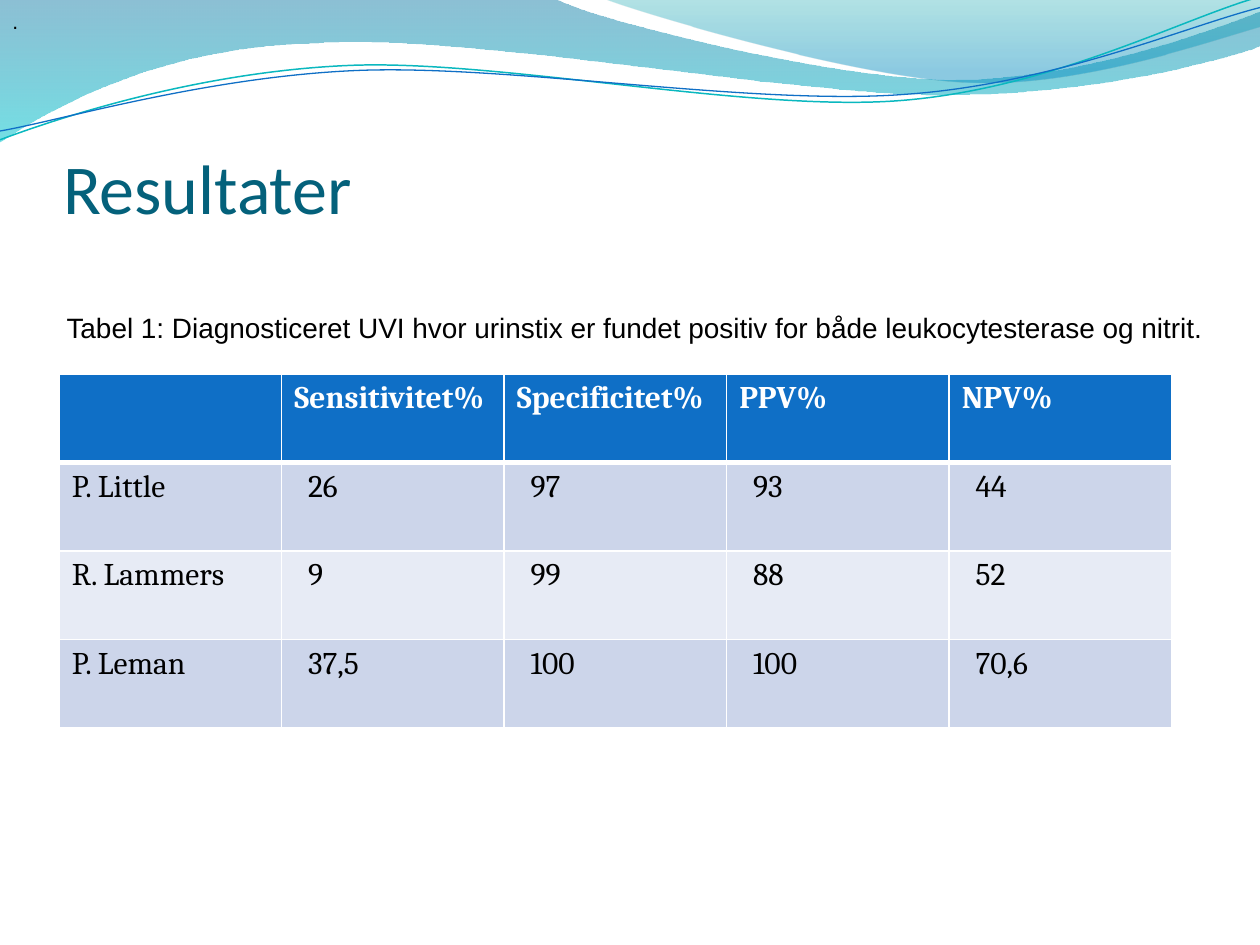
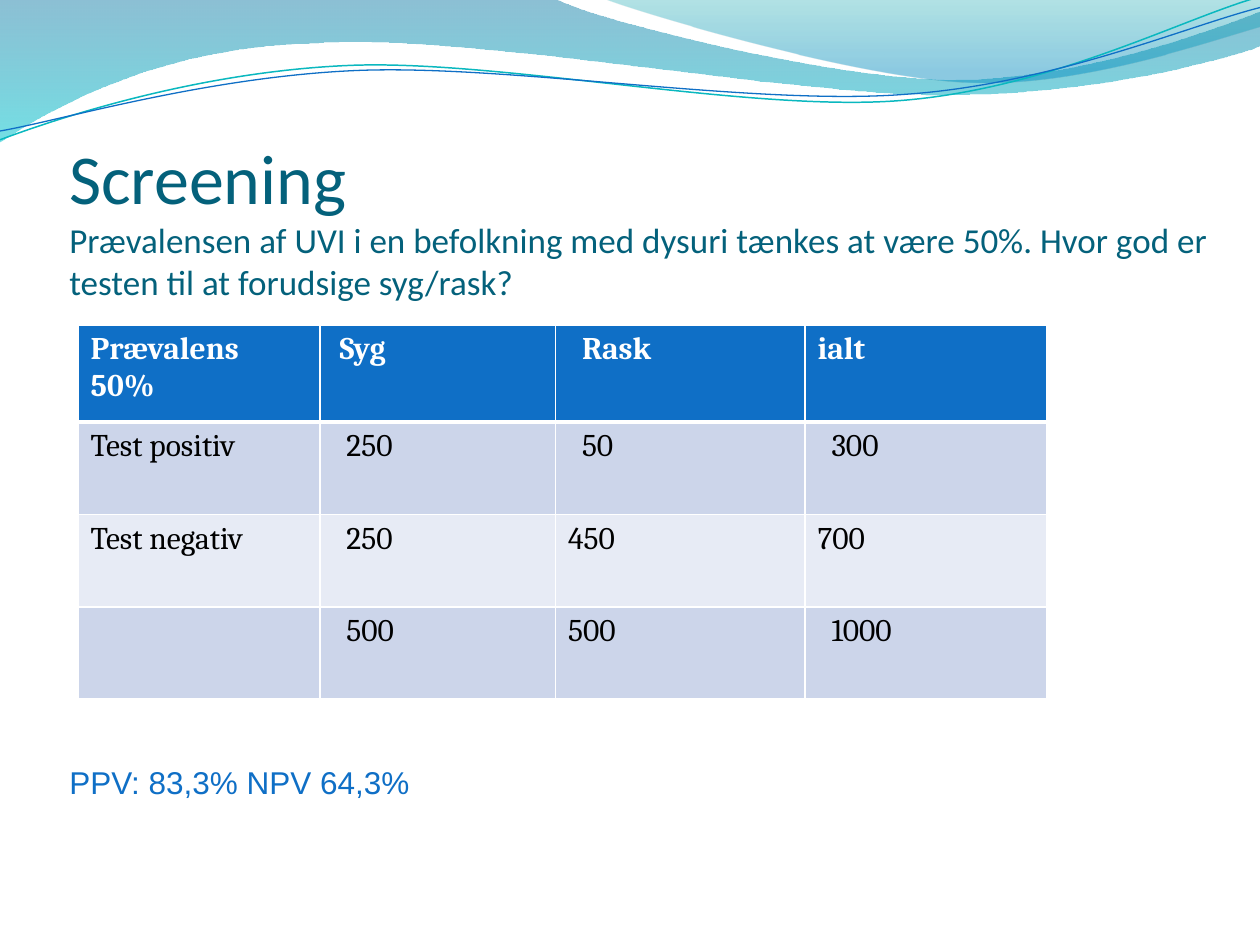
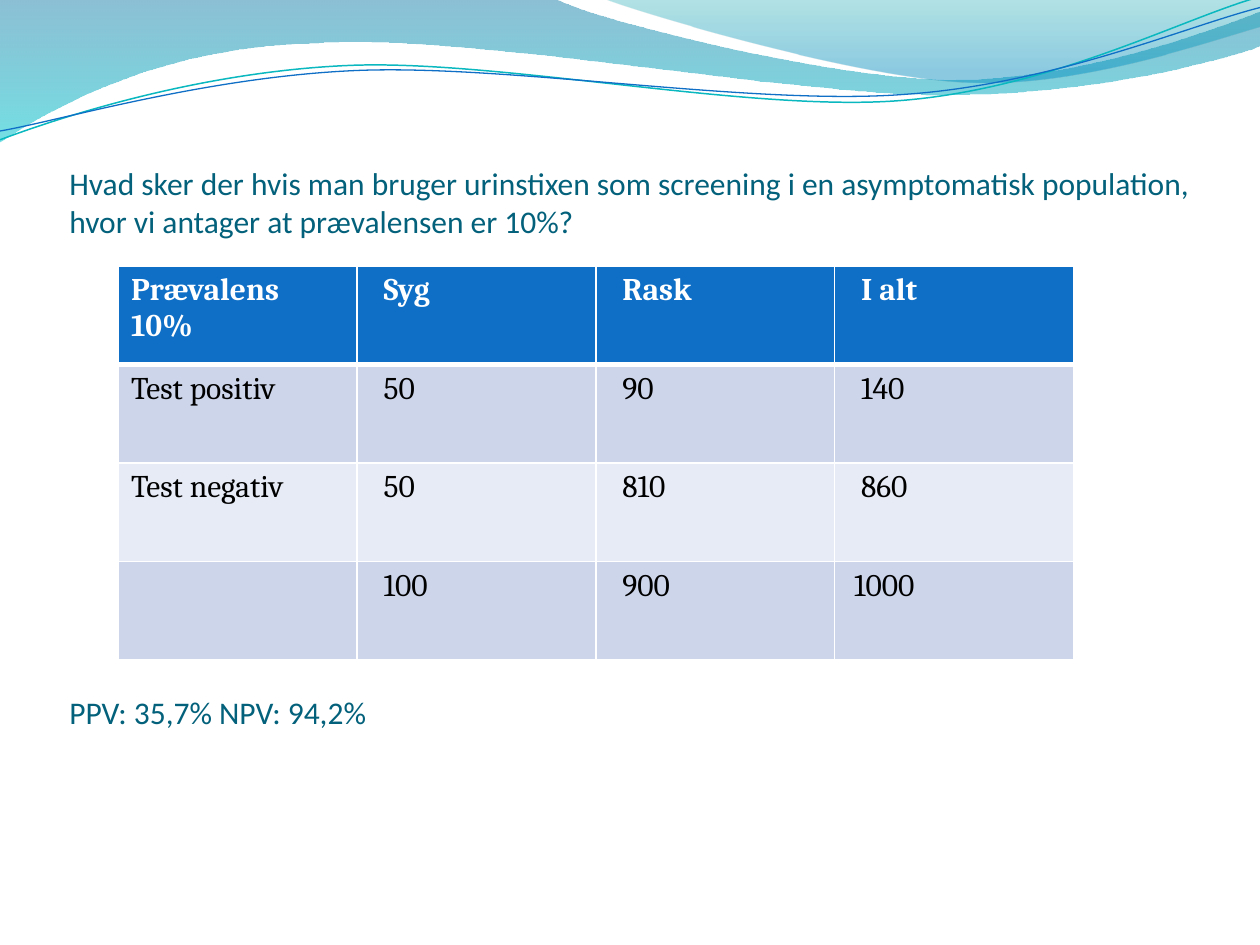
"""Builds three slides on urine dipstick results and screening."""
from lxml.etree import SubElement
from pptx import Presentation
from pptx.dml.color import RGBColor
from pptx.oxml.ns import qn
from pptx.util import Inches, Pt

TEAL, BLUE, WHITE, BLACK = "04617B", "0F6FC6", "FFFFFF", "000000"
BANDS = ("CCD5EA", "E7EBF5")
SPACE_WIDTH = 0.055

FILLED_WAVES = [
    {"start": (0, 0),
     "parts": [(4.4, -0.01),
               (4.76, 0.17, 6.64, 0.63, 7.58, 0.63),
               (8.53, 0.63, 9.58, 0.26, 10, 0.09),
               (10.01, 0.36),
               (9.83, 0.44, 8.7, 0.76, 7.46, 0.75),
               (6.22, 0.75, 3.82, 0.28, 2.57, 0.34),
               (1.29, 0.36, 0.46, 0.83, -0.01, 1.13),
               (0, 0)],
     "stops": [(0, "0074A1", 45), (1, "00C6CF", 55)]},
    {"start": (4.79, -0.01),
     "parts": [(5.09, 0.11, 6.82, 0.62, 7.69, 0.65),
               (8.56, 0.69, 9.61, 0.32, 10, 0.21),
               (10, 0),
               (4.79, -0.01)],
     "stops": [(0, "00A1A9", 30), (0.8, "008BBF", 45)]},
]
LINE_WAVES = [
    {"start": (0, 1.11),
     "parts": [(0.48, 0.93, 1.58, 0.57, 2.77, 0.52),
               (3.95, 0.47, 5.93, 0.89, 7.13, 0.8),
               (8.33, 0.71, 9.38, 0.15, 9.98, -0.02)],
     "color": "0AB8BF", "width": 0.85},
    {"start": (0, 1.04),
     "parts": [(0.47, 0.96, 1.64, 0.61, 2.83, 0.56),
               (4.03, 0.51, 5.97, 0.84, 7.17, 0.75),
               (8.36, 0.67, 9.41, 0.21, 10, 0.06)],
     "color": BLUE, "width": 0.75},
]

SLIDES = [
    {"title_box": (0.5, 1.1, 9.08, 5.47),
     "title": [("Resultater", 40, "Calibri", TEAL, 0)],
     "table_at": (0.47, 2.97),
     "cols": [8.83 / 5] * 5,
     "rows": [2.81 / 4] * 4,
     "cells": [["", "Sensitivitet%", "Specificitet%", "PPV%", "NPV%"],
               ["P. Little", "26", "97", "93", "44"],
               ["R. Lammers", "9", "99", "88", "52"],
               ["P. Leman", "37,5", "100", "100", "70,6"]],
     "indents": ["00000", "02222", "02222", "02222"],
     "caption": "Tabel 1: Diagnosticeret UVI hvor urinstix er fundet positiv "
                "for både leukocytesterase og nitrit."},
    {"title_box": (0.55, 1.02, 9.08, 5.94),
     "title": [("Screening", 40, "Calibri", TEAL, 0),
               ("Prævalensen af UVI i en befolkning med dysuri tænkes at være 50%. "
                "Hvor god er testen til at forudsige syg/rask?", 20, "Calibri", TEAL, 0),
               ("PPV: 83,3% NPV 64,3%", 18, "Arial", BLUE, 263)],
     "table_at": (0.62, 2.58),
     "cols": [1.92, 1.87, 1.98, 1.92],
     "rows": [0.77] + [2.2 / 3] * 3,
     "cells": [["Prævalens 50%", "Syg", "Rask", "ialt"],
               ["Test positiv", "250", "50", "300"],
               ["Test negativ", "250", "450", "700"],
               ["", "500", "500", "1000"]],
     "indents": ["0120", "0222", "0200", "0202"]},
    {"title_box": (0.55, 1.25, 9.08, 5.39),
     "title": [("Hvad sker der hvis man bruger urinstixen som screening i en "
                "asymptomatisk population, hvor vi antager at prævalensen er 10%?",
                18, "Calibri", TEAL, 0),
               ("PPV: 35,7% NPV: 94,2%", 18, "Calibri", TEAL, 259)],
     "table_at": (0.94, 2.11),
     "cols": [7.58 / 4] * 4,
     "rows": [3.13 / 4] * 4,
     "cells": [["Prævalens 10%", "Syg", "Rask", "I alt"],
               ["Test positiv", "50", "90", "140"],
               ["Test negativ", "50", "810", "860"],
               ["", "100", "900", "1000"]],
     "indents": ["0222", "0222", "0222", "0221"]},
]


def rgb(color):
    return RGBColor.from_string(color)


def set_font(p, size, name, color, bold=False):
    p.font.size = Pt(size)
    p.font.name = name
    p.font.color.rgb = rgb(color)
    p.font.bold = bold


def add_wave(s, wave):
    builder = s.shapes.build_freeform(*map(Inches, wave["start"]))
    for part in wave["parts"]:
        points = zip(part[::2], part[1::2])
        builder.add_line_segments([(Inches(x), Inches(y)) for x, y in points], close=False)
    sp = builder.convert_to_shape()
    sp.shadow.inherit = False
    segments = iter(list(sp.element.iter(qn("a:lnTo"))))
    for part in wave["parts"]:
        first = next(segments)
        if len(part) == 6:
            first.tag = qn("a:cubicBezTo")
            for _ in range(2):
                extra = next(segments)
                first.append(extra[0])
                extra.getparent().remove(extra)
    return sp


def add_waves(s):
    shapes = []
    for wave in FILLED_WAVES:
        sp = add_wave(s, wave)
        sp.line.fill.background()
        sp.fill.gradient()
        sp.fill.gradient_angle = 270
        for stop, (position, color, _) in zip(sp.fill.gradient_stops, wave["stops"]):
            stop.position = position
            stop.color.rgb = rgb(color)
        colors = sp.element.spPr.iter(qn("a:srgbClr"))
        for clr, (_, _, alpha) in zip(colors, wave["stops"]):
            SubElement(clr, qn("a:alpha"), val=str(alpha * 1000))
        shapes.append(sp)
    for wave in LINE_WAVES:
        sp = add_wave(s, wave)
        sp.fill.background()
        sp.line.color.rgb = rgb(wave["color"])
        sp.line.width = Pt(wave["width"])
        shapes.append(sp)
    return shapes


def move_to_layout(shapes, layout):
    for placeholder in list(layout.placeholders):
        placeholder.element.getparent().remove(placeholder.element)
    for sp in shapes:
        layout.shapes.element.append(sp.element)


def add_text(s, box, paragraphs, insets, wrap=True):
    tf = s.shapes.add_textbox(*map(Inches, box)).text_frame
    tf.word_wrap = wrap
    tf.margin_left, tf.margin_top, tf.margin_right, tf.margin_bottom = map(Inches, insets)
    for i, (text, size, name, color, gap) in enumerate(paragraphs):
        p = tf.add_paragraph() if i else tf.paragraphs[0]
        p.text = text
        p.space_before = Pt(gap)
        set_font(p, size, name, color)
    return tf


def add_caption(s, text):
    tf = add_text(s, (0, 0, 9.84, 3.1),
                  [(".", 12, "Arial", BLACK, 0), (text, 16, "Arial", BLACK, 158)],
                  (0.1, 0.07, 0.1, 0.05), wrap=False)
    pPr = tf.paragraphs[1]._p.get_or_add_pPr()
    pPr.set("marL", str(Inches(0.43)))
    pPr.set("indent", "0")


def add_borders(cell, widths):
    tcPr = cell._tc.get_or_add_tcPr()
    for side, width in zip("LRTB", widths):
        ln = SubElement(tcPr, qn(f"a:ln{side}"), w=str(Pt(width)))
        SubElement(SubElement(ln, qn("a:solidFill")), qn("a:srgbClr"), val=WHITE)


def add_result_table(s, content):
    cols, rows = content["cols"], content["rows"]
    table = s.shapes.add_table(len(rows), len(cols), *map(Inches, content["table_at"]),
                               Inches(sum(cols)), Inches(sum(rows))).table
    for column, width in zip(table.columns, cols):
        column.width = Inches(width)
    for r, (row, height) in enumerate(zip(table.rows, rows)):
        row.height = Inches(height)
        header = r == 0
        for c, cell in enumerate(row.cells):
            add_borders(cell, (1, 1, 3 if r == 1 else 1, 3 if header else 1))
            cell.fill.solid()
            cell.fill.fore_color.rgb = rgb(BLUE if header else BANDS[(r - 1) % 2])
            cell.margin_left = Inches(0.1 + SPACE_WIDTH * int(content["indents"][r][c]))
            p = cell.text_frame.paragraphs[0]
            p.text = content["cells"][r][c]
            set_font(p, 18, "Cambria", WHITE if header else BLACK, header)


def main():
    prs = Presentation()
    prs.slide_width, prs.slide_height = Inches(10), Inches(7.5)
    blank = prs.slide_layouts[6]
    for i, content in enumerate(SLIDES):
        s = prs.slides.add_slide(blank)
        if i == 0:
            move_to_layout(add_waves(s), blank)
        add_text(s, content["title_box"], content["title"], (0, 0.05, 0, 0))
        add_result_table(s, content)
        if "caption" in content:
            add_caption(s, content["caption"])
    prs.save("out.pptx")


if __name__ == "__main__":
    main()
